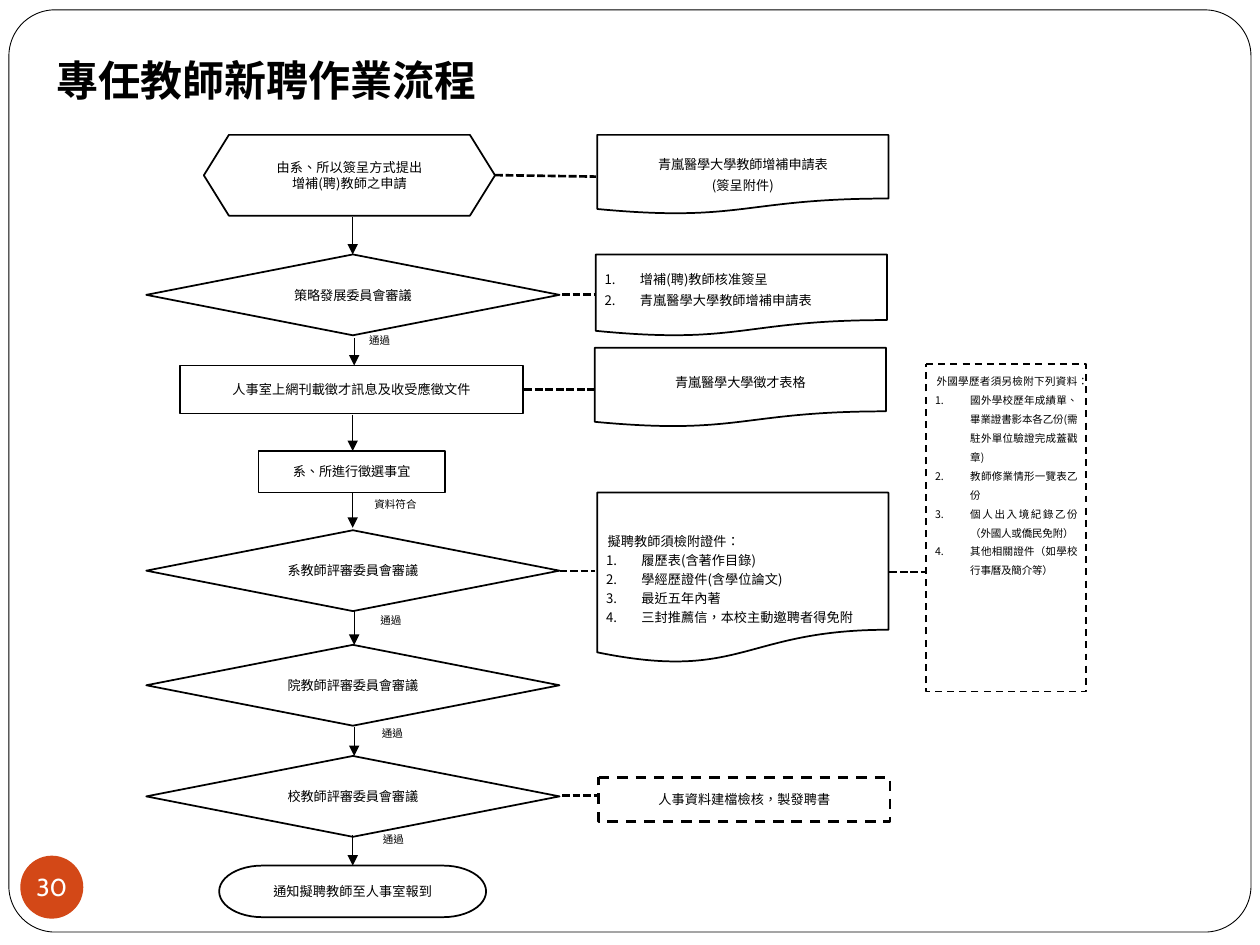
from lxml.etree import SubElement
from pptx import Presentation
from pptx.dml.color import RGBColor
from pptx.enum.dml import MSO_LINE
from pptx.enum.shapes import MSO_CONNECTOR, MSO_SHAPE
from pptx.enum.text import MSO_ANCHOR, PP_ALIGN
from pptx.oxml.ns import qn
from pptx.util import Cm, Pt

BLACK = RGBColor(0x00, 0x00, 0x00)
WHITE = RGBColor(0xFF, 0xFF, 0xFF)
ORANGE = RGBColor(0xD3, 0x48, 0x17)
TC_FONT = "Noto Sans CJK TC"
SC_FONT = "Noto Sans CJK SC"
SCHOOL = "青嵐醫學大學"


class FlowSlide:
    """Holds the text style and the slide that is being drawn."""

    def __init__(self, slide, font=TC_FONT, size=7.5, note_size=6):
        self.slide = slide
        self.font = font
        self.size = size
        self.note_size = note_size

    def add_run(self, paragraph, text, size=None, font=None, color=BLACK,
                bold=False, tracking=0):
        """Add text; tracking is in points, and a newline is a line break."""
        for index, line in enumerate(text.split("\n")):
            if index:
                paragraph.add_line_break()
            run = paragraph.add_run()
            run.text = line
            run.font.size = Pt(size or self.size)
            run.font.name = font or self.font
            run.font.bold = bold
            run.font.color.rgb = color
            properties = run.font._element
            properties.set("lang", "zh-TW")
            if tracking:
                properties.set("spc", str(round(tracking * 100)))
            east_asian = font if font in (TC_FONT, SC_FONT) else self.font
            SubElement(properties, qn("a:ea"), typeface=east_asian)

    def set_frame(self, frame, anchor, inset=(0.18, 0.1)):
        frame.word_wrap = True
        frame.vertical_anchor = anchor
        frame.margin_left = frame.margin_right = Cm(inset[0])
        frame.margin_top = frame.margin_bottom = Cm(inset[1])

    def add_title(self, text, box):
        title = self.slide.shapes.title
        title.left, title.top, title.width, title.height = map(Cm, box)
        self.set_frame(title.text_frame, MSO_ANCHOR.MIDDLE, (0.25, 0.13))
        paragraph = title.text_frame.paragraphs[0]
        paragraph.alignment = PP_ALIGN.LEFT
        self.add_run(paragraph, text, 24, "Times New Roman", bold=True)

    def add_box(self, kind, box, fill=None, line=1, dash=None,
                anchor=MSO_ANCHOR.MIDDLE):
        shape = self.slide.shapes.add_shape(kind, *map(Cm, box))
        shape.shadow.inherit = False
        if fill is None:
            shape.fill.background()
        else:
            shape.fill.solid()
            shape.fill.fore_color.rgb = fill
        if line:
            shape.line.color.rgb = BLACK
            shape.line.width = Pt(line)
            if dash:
                shape.line.dash_style = dash
        else:
            shape.line.fill.background()
        self.set_frame(shape.text_frame, anchor)
        return shape

    def add_step(self, kind, box, text, tracking=0, **look):
        shape = self.add_box(kind, box, **look)
        paragraph = shape.text_frame.paragraphs[0]
        paragraph.alignment = PP_ALIGN.CENTER
        self.add_run(paragraph, text, tracking=tracking)
        return shape

    def add_list(self, shape, items, heading=None, spacing=10.8,
                 alignment=PP_ALIGN.JUSTIFY, **style):
        """Write a numbered list, with an optional plain first line."""
        frame = shape.text_frame
        lines = ([(heading, False)] if heading else []) + [(item, True) for item in items]
        for index, (text, numbered) in enumerate(lines):
            paragraph = frame.add_paragraph() if index else frame.paragraphs[0]
            paragraph.alignment = alignment
            paragraph.line_spacing = Pt(spacing)
            properties = paragraph._p.get_or_add_pPr()
            properties.set("marL", str(Cm(0.71 if numbered else 0.03)))
            properties.set("indent", str(Cm(-0.71 if numbered else 0)))
            if numbered:
                SubElement(properties, qn("a:buFont"), typeface=self.font)
                SubElement(properties, qn("a:buAutoNum"), type="arabicPeriod")
            self.add_run(paragraph, text, **style)

    def add_label(self, left, top, text, width=1.17):
        label = self.slide.shapes.add_textbox(Cm(left), Cm(top), Cm(width), Cm(0.51))
        self.set_frame(label.text_frame, MSO_ANCHOR.TOP)
        self.add_run(label.text_frame.paragraphs[0], text, self.note_size)

    def add_line(self, start, end, width):
        line = self.slide.shapes.add_connector(
            MSO_CONNECTOR.STRAIGHT, *map(Cm, (*start, *end)))
        line.line.color.rgb = BLACK
        line.line.width = Pt(width)
        SubElement(line._element.spPr, qn("a:effectLst"))
        return line

    def add_arrow(self, x, top, bottom):
        arrow = self.add_line((x, top), (x, bottom), 0.5)
        SubElement(arrow.line._get_or_add_ln(), qn("a:tailEnd"), type="triangle")

    def add_dashes(self, start, end):
        self.add_line(start, end, 1.5).line.dash_style = MSO_LINE.SQUARE_DOT


def main():
    presentation = Presentation()
    presentation.slide_width, presentation.slide_height = Cm(25.4), Cm(19.05)
    slide = presentation.slides.add_slide(presentation.slide_layouts[5])
    flow = FlowSlide(slide)

    border = flow.add_box(MSO_SHAPE.ROUNDED_RECTANGLE, (0.18, 0.2, 25.04, 18.59), line=0.5)
    border.adjustments[0] = 0.05
    flow.add_title("專任教師新聘作業流程", (0.89, 0.97, 12.7, 1.27))
    badge = flow.add_box(MSO_SHAPE.OVAL, (0.41, 17.25, 1.27, 1.27), ORANGE, line=0)
    flow.set_frame(badge.text_frame, MSO_ANCHOR.MIDDLE, (0, 0))
    badge.text_frame.word_wrap = False
    badge.text_frame.paragraphs[0].alignment = PP_ALIGN.CENTER
    flow.add_run(badge.text_frame.paragraphs[0], "30", 14, "Cabin", WHITE)

    for start, end in [
        ((9.98, 3.53), (12.01, 3.56)),
        ((11.33, 5.94), (12.01, 5.94)),
        ((10.57, 7.85), (11.99, 7.85)),
        ((11.28, 11.51), (11.99, 11.51)),
        ((17.93, 11.53), (18.67, 11.53)),
        ((11.33, 16.03), (12.07, 16.03)),
    ]:
        flow.add_dashes(start, end)
    for x, top, bottom in [
        (7.11, 4.37, 5.13), (7.14, 6.81, 7.37), (7.11, 8.36, 9.09),
        (7.11, 9.93, 10.64), (7.14, 12.32, 13), (7.14, 14.66, 15.24),
        (7.11, 16.84, 17.45),
    ]:
        flow.add_arrow(x, top, bottom)

    start = flow.add_step(MSO_SHAPE.HEXAGON, (4.11, 2.72, 5.87, 1.63),
                          "由系、所以簽呈方式提出\n增補(聘)教師之申請")
    start.adjustments[0] = 0.31
    for top, committee in [(5.13, "策略發展"), (10.69, "系教師評審"),
                           (13, "院教師評審"), (15.24, "校教師評審")]:
        flow.add_step(MSO_SHAPE.DIAMOND, (2.95, top, 8.33, 1.63),
                      f"{committee}委員會審議", -0.1)
    flow.add_step(MSO_SHAPE.RECTANGLE, (3.63, 7.37, 6.91, 0.97),
                  "人事室上網刊載徵才訊息及收受應徵文件", fill=WHITE)
    selection = flow.add_step(MSO_SHAPE.RECTANGLE, (5.21, 9.09, 3.76, 0.84),
                              "系、所進行徵選事宜", -0.1, fill=WHITE)
    selection.text_frame.paragraphs[0].space_before = Pt(2.1)
    flow.add_step(MSO_SHAPE.FLOWCHART_TERMINATOR, (4.42, 17.45, 5.38, 1.04),
                  "通知擬聘教師至人事室報到")

    for left, top in [(7.26, 6.63), (7.49, 12.27), (7.52, 14.55), (7.54, 16.69)]:
        flow.add_label(left, top, "通過")
    flow.add_label(7.37, 9.93, "資料符合", 1.83)

    document = MSO_SHAPE.FLOWCHART_DOCUMENT
    application = flow.add_step(document, (12.04, 2.72, 5.87, 1.6),
                                f"{SCHOOL}教師增補申請表", -0.1,
                                anchor=MSO_ANCHOR.BOTTOM)
    application.text_frame.paragraphs[0].line_spacing = Pt(10.8)
    attachment = application.text_frame.add_paragraph()
    attachment.alignment = PP_ALIGN.CENTER
    attachment.line_spacing = Pt(12)
    for text, font in [("(", SC_FONT), ("簽呈附件", TC_FONT), (")", TC_FONT)]:
        flow.add_run(attachment, text, font=font)

    approval = flow.add_box(document, (12.01, 5.13, 5.87, 1.65), WHITE)
    flow.add_list(approval, ["增補(聘)教師核准簽呈", f"{SCHOOL}教師增補申請表"],
                  spacing=12, alignment=PP_ALIGN.LEFT, font=SC_FONT)
    recruiting = flow.add_step(document, (11.99, 7.01, 5.87, 1.6),
                               f"{SCHOOL}徵才表格", -0.1)
    recruiting.text_frame.paragraphs[0].line_spacing = Pt(12)
    certificates = flow.add_box(document, (12.04, 9.93, 5.87, 3.45),
                                anchor=MSO_ANCHOR.BOTTOM)
    flow.add_list(certificates, [
        "履歷表(含著作目錄)",
        "學經歷證件(含學位論文)",
        "最近五年內著",
        "三封推薦信，本校主動邀聘者得免附",
    ], "擬聘教師須檢附證件：")

    process = MSO_SHAPE.FLOWCHART_PROCESS
    flow.add_step(process, (12.07, 15.67, 5.87, 0.89), "人事資料建檔檢核，製發聘書",
                  line=1.5, dash=MSO_LINE.DASH)
    foreign = flow.add_box(process, (18.67, 7.34, 3.23, 6.6), dash=MSO_LINE.DASH,
                           anchor=MSO_ANCHOR.TOP)
    flow.add_list(foreign, [
        "國外學校歷年成績單、畢業證書影本各乙份(需駐外單位驗證完成蓋戳章)",
        "教師修業情形一覽表乙份",
        "個人出入境紀錄乙份（外國人或僑民免附）",
        "其他相關證件（如學校行事曆及簡介等）",
    ], "外國學歷者須另檢附下列資料：", size=flow.note_size, tracking=-0.1)

    presentation.save("out.pptx")


if __name__ == "__main__":
    main()
